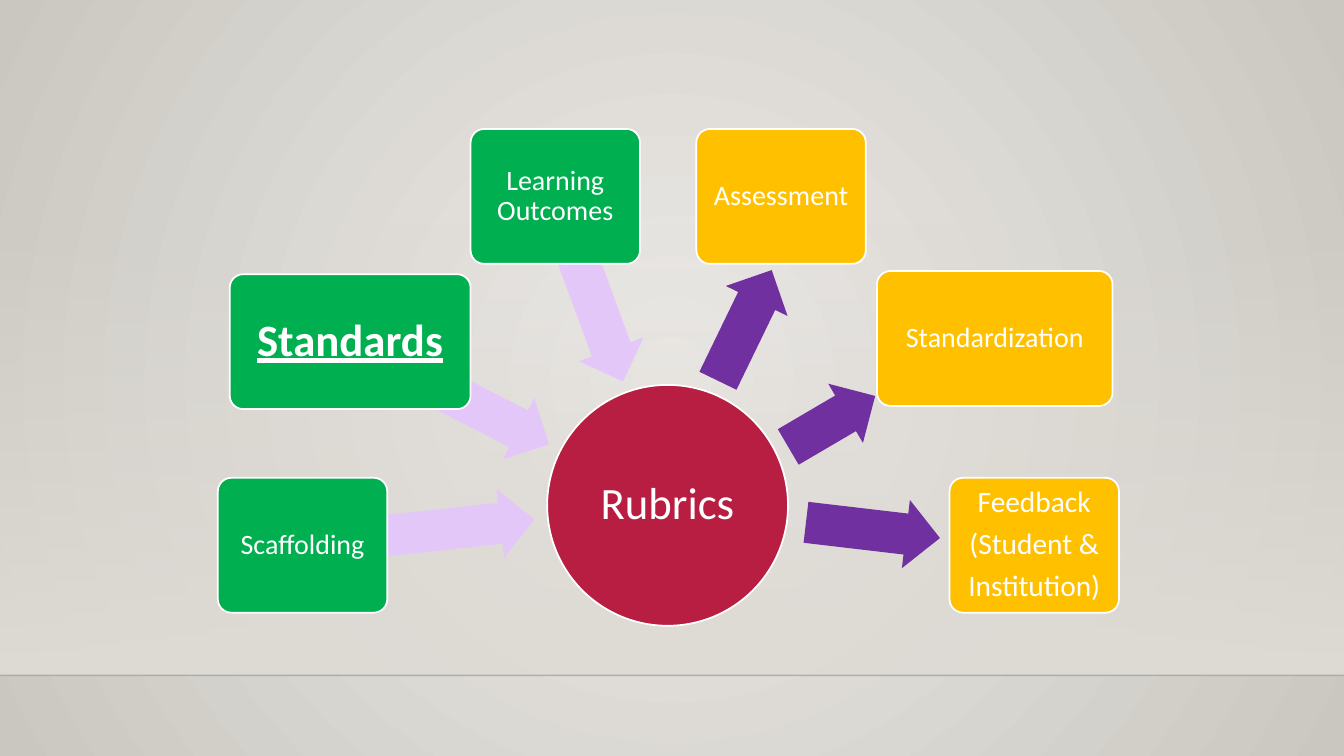
from lxml import etree
from pptx import Presentation
from pptx.dml.color import RGBColor
from pptx.enum.shapes import MSO_CONNECTOR, MSO_SHAPE
from pptx.enum.text import MSO_ANCHOR, PP_ALIGN
from pptx.oxml.ns import qn
from pptx.util import Cm, Pt

OVAL = MSO_SHAPE.OVAL
BOX = MSO_SHAPE.ROUNDED_RECTANGLE
RECT = MSO_SHAPE.RECTANGLE
ARROW = MSO_SHAPE.LEFT_ARROW
STRAIGHT = MSO_CONNECTOR.STRAIGHT
MIDDLE = MSO_ANCHOR.MIDDLE
CENTER = PP_ALIGN.CENTER

WIDTH, HEIGHT = 33.87, 19.05
FLOOR_TOP = 17.02
BOX_WIDTH, BOX_HEIGHT = 4.27, 3.4
ARROW_HEIGHT = 1.73
GREEN, GOLD, CRIMSON = "00B050", "FFC000", "B71E42"
LILAC, PURPLE, WHITE = "E4C7F9", "7030A0", "FFFFFF"


def rgb(value):
    return RGBColor.from_string(value)


def set_alpha(color, percent):
    etree.SubElement(color, qn("a:alpha")).set("val", str(percent * 1000))


class Diagram:
    font = "Calibri"
    outline = 1.25

    def __init__(self, slide):
        self.slide = slide

    def gradient(self, fill, colors):
        fill.gradient()
        for stop, position, color in zip(fill.gradient_stops, (0, 1), colors):
            stop.position = position
            stop.color.rgb = rgb(color)

    def backdrop(self, inner, outer):
        self.gradient(self.slide.background.fill, (inner, outer))
        grad = self.slide.element.find(".//" + qn("a:gradFill"))
        grad.remove(grad.find(qn("a:lin")))
        circle = etree.SubElement(grad, qn("a:path"), {"path": "circle"})
        etree.SubElement(circle, qn("a:fillToRect"),
                         {side: "50000" for side in "ltrb"})

    def shape(self, kind, x, y, w, h):
        sp = self.slide.shapes.add_shape(kind, Cm(x), Cm(y), Cm(w), Cm(h))
        sp.shadow.inherit = False
        sp.line.fill.background()
        return sp

    def wall(self, top, color):
        sp = self.shape(RECT, 0, top, WIDTH, FLOOR_TOP - top)
        self.gradient(sp.fill, (color, color))
        sp.fill.gradient_angle = 270
        set_alpha(sp.element.find(".//" + qn("a:srgbClr")), 0)

    def floor_line(self):
        line = self.slide.shapes.add_connector(
            STRAIGHT, 0, Cm(FLOOR_TOP), Cm(WIDTH), Cm(FLOOR_TOP))
        line.line.width = Pt(1)
        line.line.color.rgb = rgb("000001")
        set_alpha(line.element.find(".//" + qn("a:srgbClr")), 20)
        etree.SubElement(line.element.spPr, qn("a:effectLst"))

    def arrow(self, cx, cy, length, rotation, color):
        sp = self.shape(ARROW, cx - length / 2, cy - ARROW_HEIGHT / 2,
                        length, ARROW_HEIGHT)
        sp.adjustments[0] = 0.6
        sp.adjustments[1] = 0.5
        sp.rotation = rotation
        sp.fill.solid()
        sp.fill.fore_color.rgb = rgb(color)

    def node(self, kind, x, y, w, h, color, lines, size=20, inset=0.1,
             strong=False):
        sp = self.shape(kind, x, y, w, h)
        if kind == BOX:
            sp.adjustments[0] = 0.1
        sp.fill.solid()
        sp.fill.fore_color.rgb = rgb(color)
        sp.line.color.rgb = rgb(WHITE)
        sp.line.width = Pt(self.outline)
        tf = sp.text_frame
        tf.word_wrap = True
        tf.vertical_anchor = MIDDLE
        tf.margin_left = tf.margin_right = Cm(inset)
        tf.margin_top = tf.margin_bottom = Cm(inset)
        for i, text in enumerate(lines):
            p = tf.add_paragraph() if i else tf.paragraphs[0]
            p.alignment = CENTER
            p.line_spacing = 0.9
            p.space_after = Pt(0.35 * size)
            r = p.add_run()
            r.text = text
            r.font.name = self.font
            r.font.size = Pt(size)
            r.font.color.rgb = rgb(WHITE)
            if strong:
                r.font.bold = r.font.underline = True


def main():
    prs = Presentation()
    prs.slide_width, prs.slide_height = Cm(WIDTH), Cm(HEIGHT)
    diagram = Diagram(prs.slides.add_slide(prs.slide_layouts[6]))

    diagram.backdrop("ECEAE7", "CAC7C1")
    diagram.wall(5.61, "DFDBD5")
    diagram.floor_line()
    diagram.node(OVAL, 13.79, 9.7, 6.07, 6.07, CRIMSON, ["Rubrics"], 32, 0.05)

    inputs = [
        ((10.54, 13.41, 5.89, 173.8), (5.49, 12.04, BOX_WIDTH),
         ["Scaffolding"], {}),
        ((11.33, 9.91, 5.64, 207.2), (5.79, 6.91, 6.07),
         ["Standards"], {"size": 32, "inset": 0.18, "strong": True}),
        ((14.85, 7.29, 4.95, 249.9), (11.86, 3.25, BOX_WIDTH),
         ["Learning Outcomes"], {}),
    ]
    outputs = [
        ((18.77, 8.2, 3.1, 115.9), (17.55, 3.25, BOX_WIDTH),
         ["Assessment"], {}),
        ((20.96, 10.62, 2.54, 149.6), (22.1, 6.83, 5.94),
         ["Standardization"], {}),
        ((22, 13.36, 3.4, 186.7), (23.93, 12.04, BOX_WIDTH),
         ["Feedback", "(Student &", "Institution)"], {"size": 21}),
    ]
    for branches, arrow_color, box_color in ((inputs, LILAC, GREEN),
                                             (outputs, PURPLE, GOLD)):
        for arrow, box, lines, style in branches:
            diagram.arrow(*arrow, arrow_color)
            diagram.node(BOX, *box, BOX_HEIGHT, box_color, lines, **style)

    prs.save("out.pptx")


if __name__ == "__main__":
    main()
